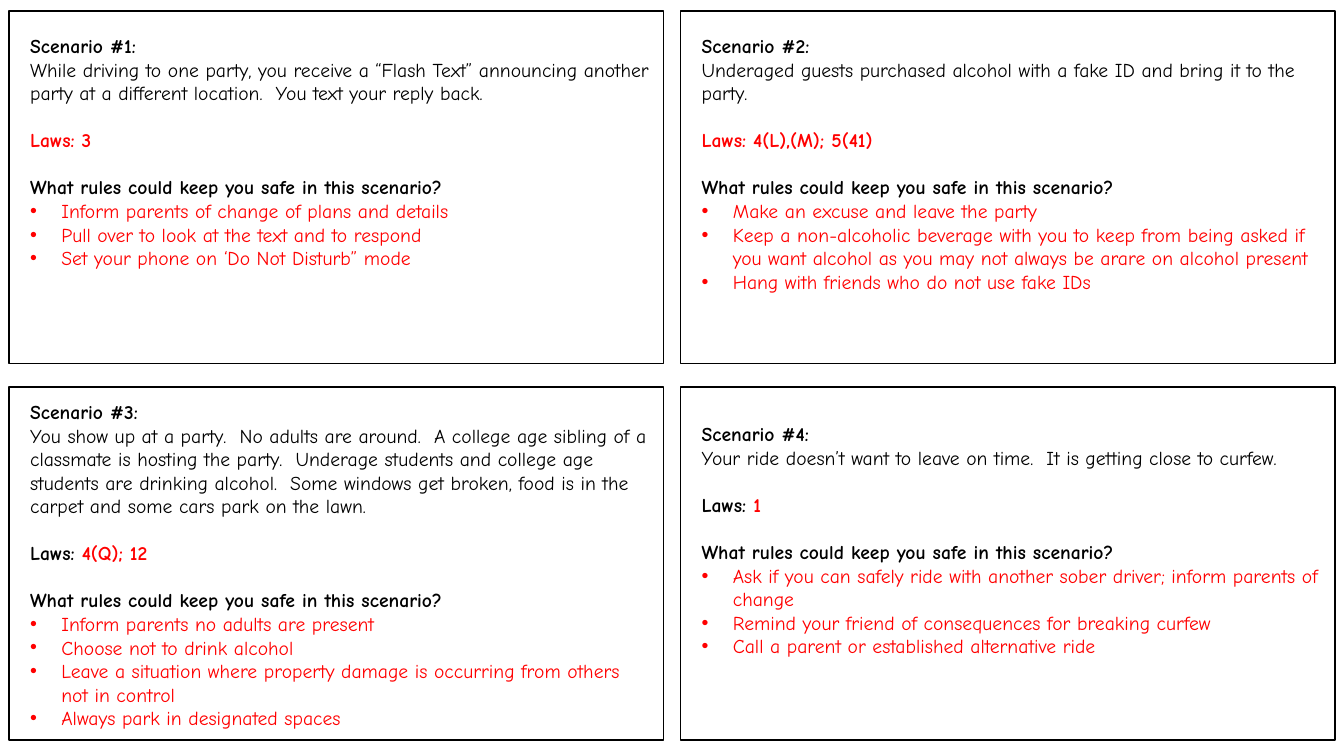
from lxml import etree
from pptx import Presentation
from pptx.dml.color import RGBColor
from pptx.enum.shapes import MSO_SHAPE
from pptx.enum.text import MSO_AUTO_SIZE
from pptx.oxml.ns import qn
from pptx.util import Inches, Pt

COLORS = {"paper": "FFFFFF", "ink": "000000", "answer": "FF0000"}
FONT = "Comic Neue"
LINE_GAP = Pt(16.8)  # height of one line of text
BULLET_INDENT = Inches(0.31)

CARD_WIDTH, CARD_HEIGHT = 6.49, 3.5
CARD_LEFTS = [0.09, 6.75]
CARD_TOPS = [0.11, 3.84]
TEXT_INSET, TEXT_WIDTH = 0.11, 6.38

QUESTION = "What rules could keep you safe in this scenario?"

# Cards run row by row; text_top and text_height place each text box.
SCENARIOS = [
    {
        "text_top": 0.29, "text_height": 3.4,
        "story": "While driving to one party, you receive a “Flash Text” announcing another "
                 "party at a different location.  You text your reply back.",
        "laws": "3", "label_color": "answer",
        "rules": [
            "Inform parents of change of plans and details",
            "Pull over to look at the text and to respond",
            "Set your phone on ‘Do Not Disturb” mode",
        ],
    },
    {
        "text_top": 0.29, "text_height": 3.16,
        "story": "Underaged guests purchased alcohol with a fake ID and bring it to the party.",
        "laws": "4(L),(M); 5(41)", "label_color": "answer",
        "rules": [
            "Make an excuse and leave the party",
            "Keep a non-alcoholic beverage with you to keep from being asked if you want "
            "alcohol as you may not always be arare on alcohol present",
            "Hang with friends who do not use fake IDs",
        ],
    },
    {
        "text_top": 3.92, "text_height": 3.64,
        "story": "You show up at a party.  No adults are around.  A college age sibling of a "
                 "classmate is hosting the party.  Underage students and college age students "
                 "are drinking alcohol.  Some windows get broken, food is in the carpet and "
                 "some cars park on the lawn.",
        "laws": "4(Q); 12", "label_color": "ink",
        "rules": [
            "Inform parents no adults are present",
            "Choose not to drink alcohol",
            "Leave a situation where property damage is occurring from others not in control",
            "Always park in designated spaces",
        ],
    },
    {
        "text_top": 4.14, "text_height": 2.69,
        "story": "Your ride doesn’t want to leave on time.  It is getting close to curfew.",
        "laws": "1", "label_color": "ink",
        "rules": [
            "Ask if you can safely ride with another sober driver; inform parents of change",
            "Remind your friend of consequences for breaking curfew",
            "Call a parent or established alternative ride",
        ],
    },
]


def add_text(paragraph, text, color="ink", bold=False, gap_before=False, bullet=False):
    run = paragraph.add_run()
    run.text = text
    run.font.name = FONT
    run.font.size = Pt(14)
    run.font.bold = bold
    run.font.color.rgb = RGBColor.from_string(COLORS[color])
    if gap_before:
        paragraph.space_before = LINE_GAP
    if bullet:
        properties = paragraph._p.get_or_add_pPr()
        properties.set("marL", str(BULLET_INDENT))
        properties.set("indent", str(-BULLET_INDENT))
        etree.SubElement(properties, qn("a:buFont")).set("typeface", "Arial")
        etree.SubElement(properties, qn("a:buChar")).set("char", "•")


presentation = Presentation()
presentation.slide_width = Inches(13.33)
presentation.slide_height = Inches(7.5)
slide = presentation.slides.add_slide(presentation.slide_layouts[6])

for index, scenario in enumerate(SCENARIOS):
    row, column = divmod(index, 2)
    left = CARD_LEFTS[column]

    card = slide.shapes.add_shape(
        MSO_SHAPE.RECTANGLE, Inches(left), Inches(CARD_TOPS[row]),
        Inches(CARD_WIDTH), Inches(CARD_HEIGHT))
    card.shadow.inherit = False
    card.fill.solid()
    card.fill.fore_color.rgb = RGBColor.from_string(COLORS["paper"])
    card.line.color.rgb = RGBColor.from_string(COLORS["ink"])
    card.line.width = Pt(1)

    text_box = slide.shapes.add_textbox(
        Inches(left + TEXT_INSET), Inches(scenario["text_top"]),
        Inches(TEXT_WIDTH), Inches(scenario["text_height"]))
    frame = text_box.text_frame
    frame.word_wrap = True
    frame.auto_size = MSO_AUTO_SIZE.SHAPE_TO_FIT_TEXT

    add_text(frame.paragraphs[0], f"Scenario #{index + 1}:", bold=True)
    add_text(frame.add_paragraph(), scenario["story"])
    laws = frame.add_paragraph()
    add_text(laws, "Laws: ", color=scenario["label_color"], bold=True, gap_before=True)
    add_text(laws, scenario["laws"], color="answer", bold=True)
    add_text(frame.add_paragraph(), QUESTION, bold=True, gap_before=True)
    for rule in scenario["rules"]:
        add_text(frame.add_paragraph(), rule, color="answer", bullet=True)

presentation.save("out.pptx")
